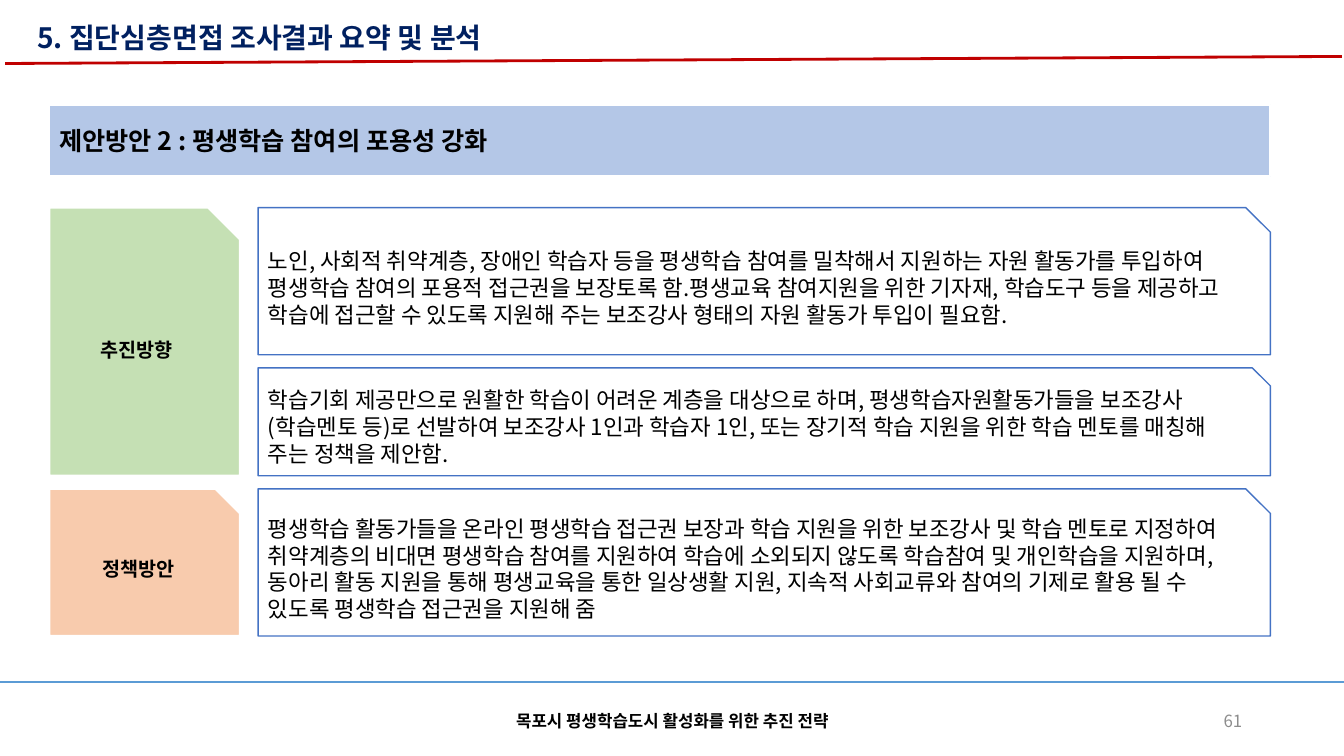
"""Builds the slide on strengthening inclusive participation in lifelong learning."""
from lxml.etree import SubElement
from pptx import Presentation
from pptx.dml.color import RGBColor
from pptx.enum.shapes import MSO_CONNECTOR, MSO_SHAPE
from pptx.enum.text import MSO_ANCHOR, PP_ALIGN
from pptx.oxml.ns import qn
from pptx.util import Inches, Pt

FONT = "Noto Sans CJK KR"
BLACK = RGBColor(0x00, 0x00, 0x00)
WHITE = RGBColor(0xFF, 0xFF, 0xFF)
GRAY = RGBColor(0x8C, 0x8C, 0x8C)
NAVY = RGBColor(0x00, 0x20, 0x60)
RED = RGBColor(0xC0, 0x00, 0x00)
BLUE = RGBColor(0x44, 0x72, 0xC4)
SKY = RGBColor(0x5B, 0x9B, 0xD5)
PALE_BLUE = RGBColor(0xB4, 0xC7, 0xE7)
GREEN = RGBColor(0xC5, 0xE0, 0xB4)
PEACH = RGBColor(0xF8, 0xCB, 0xAD)

TITLE = "5. 집단심층면접 조사결과 요약 및 분석"
BANNER = "제안방안 2 : 평생학습 참여의 포용성 강화"
FOOTER = "목포시 평생학습도시 활성화를 위한 추진 전략"
PAGE = "61"
GROUPS = [
    ("추진방향", GREEN, [
        (1.46, "노인, 사회적 취약계층, 장애인 학습자 등을 평생학습 참여를 밀착해서 지원하는 "
               "자원 활동가를 투입하여 평생학습 참여의 포용적 접근권을 보장토록 함.평생교육 "
               "참여지원을 위한 기자재, 학습도구 등을 제공하고 학습에 접근할 수 있도록 지원해 "
               "주는 보조강사 형태의 자원 활동가 투입이 필요함."),
        (1.07, "학습기회 제공만으로 원활한 학습이 어려운 계층을 대상으로 하며, "
               "평생학습자원활동가들을 보조강사(학습멘토 등)로 선발하여 보조강사 1인과 학습자 "
               "1인, 또는 장기적 학습 지원을 위한 학습 멘토를 매칭해 주는 정책을 제안함."),
    ]),
    ("정책방안", PEACH, [
        (1.46, "평생학습 활동가들을 온라인 평생학습 접근권 보장과 학습 지원을 위한 보조강사 및 "
               "학습 멘토로 지정하여 취약계층의 비대면 평생학습 참여를 지원하여 학습에 소외되지 "
               "않도록 학습참여 및 개인학습을 지원하며, 동아리 활동 지원을 통해 평생교육을 통한 "
               "일상생활 지원, 지속적 사회교류와 참여의 기제로 활용 될 수 있도록 평생학습 "
               "접근권을 지원해 줌"),
    ]),
]

SLIDE_W, SLIDE_H = 13.33, 7.5
LEFT, FULL_W = 0.49, 12.11
LABEL_W, CARD_X, CARD_W = 1.89, 2.56, 10.04
FIRST_TOP, GAP = 2.06, 0.13


def write(shape, text, size, color=BLACK, bold=False, align=PP_ALIGN.LEFT,
          anchor=MSO_ANCHOR.MIDDLE):
    tf = shape.text_frame
    tf.word_wrap = True
    tf.vertical_anchor = anchor
    p = tf.paragraphs[0]
    p.alignment = align
    r = p.add_run()
    r.text = text
    r.font.size = Pt(size)
    r.font.bold = bold
    r.font.color.rgb = color
    r.font.name = FONT
    SubElement(r.font._element, qn("a:ea"), typeface=FONT)


def add_text(s, box, text, size, **style):
    write(s.shapes.add_textbox(*map(Inches, box)), text, size, **style)


def add_panel(s, kind, box, fill, line, width, text, size, **style):
    sp = s.shapes.add_shape(kind, *map(Inches, box))
    sp.shadow.inherit = False
    sp.fill.solid()
    sp.fill.fore_color.rgb = fill
    sp.line.color.rgb = line
    sp.line.width = Pt(width)
    write(sp, text, size, **style)


def add_rule(s, ends, color, width):
    rule = s.shapes.add_connector(MSO_CONNECTOR.STRAIGHT, *map(Inches, ends))
    rule.line.color.rgb = color
    rule.line.width = Pt(width)
    SubElement(rule._element.spPr, qn("a:effectLst"))


def add_groups(s):
    top = FIRST_TOP
    for label, fill, cards in GROUPS:
        group_top = top
        for height, text in cards:
            add_panel(s, MSO_SHAPE.SNIP_1_RECTANGLE, (CARD_X, top, CARD_W, height),
                      WHITE, BLUE, 1, text, 16)
            top += height + GAP
        add_panel(s, MSO_SHAPE.SNIP_1_RECTANGLE,
                  (LEFT, group_top, LABEL_W, top - GAP - group_top),
                  fill, WHITE, 1.5, label, 14, bold=True, align=PP_ALIGN.CENTER)


def main():
    prs = Presentation()
    prs.slide_width, prs.slide_height = Inches(SLIDE_W), Inches(SLIDE_H)
    s = prs.slides.add_slide(prs.slide_layouts[6])
    add_text(s, (9.42, 6.95, 3, 0.4), PAGE, 12, color=GRAY, align=PP_ALIGN.RIGHT)
    add_rule(s, (0, 6.77, SLIDE_W, 6.77), SKY, 1.5)
    add_text(s, (4.42, 6.95, 4.5, 0.4), FOOTER, 12, bold=True, align=PP_ALIGN.CENTER)
    add_rule(s, (0.05, 0.63, 13.31, 0.56), RED, 2)
    add_text(s, (0.27, 0.15, 5.87, 0.44), TITLE, 20, color=NAVY, bold=True,
             anchor=MSO_ANCHOR.TOP)
    add_panel(s, MSO_SHAPE.RECTANGLE, (LEFT, 1.04, FULL_W, 0.71),
              PALE_BLUE, WHITE, 1.5, BANNER, 18, bold=True)
    add_groups(s)
    prs.save("out.pptx")


if __name__ == "__main__":
    main()
